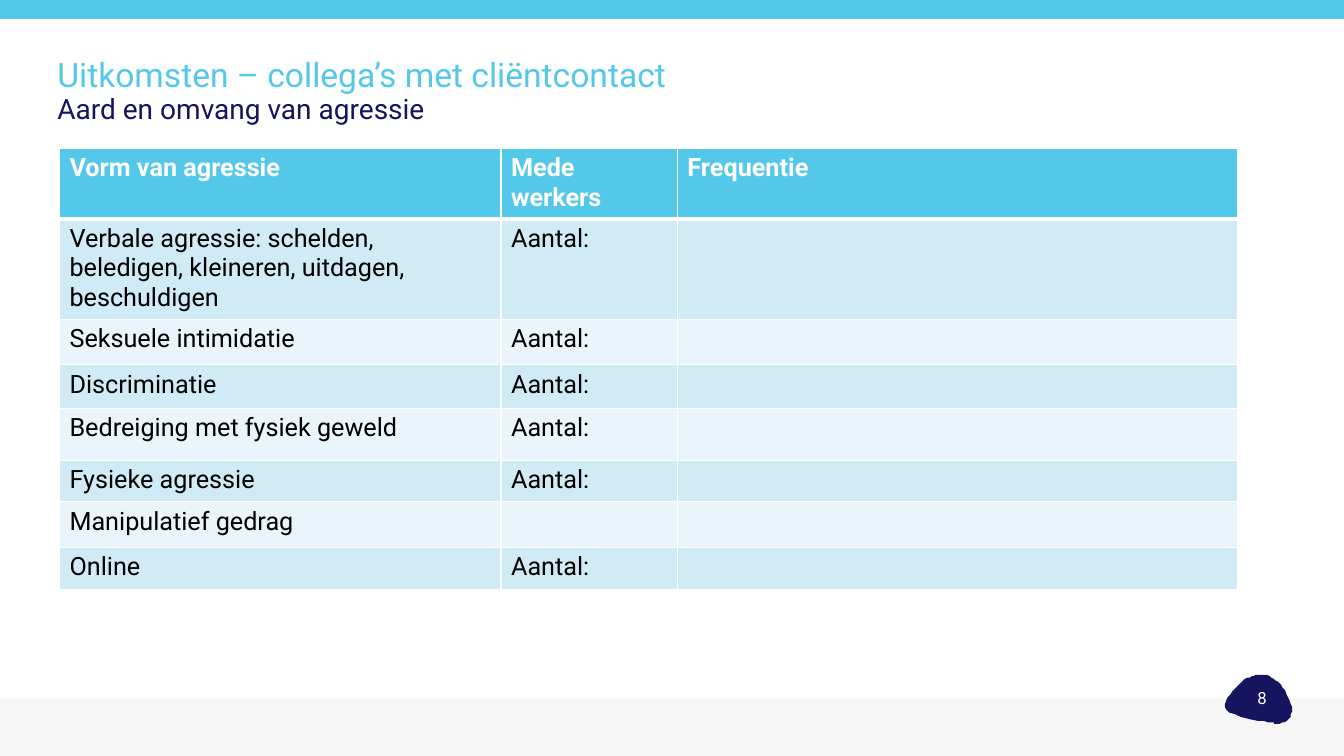
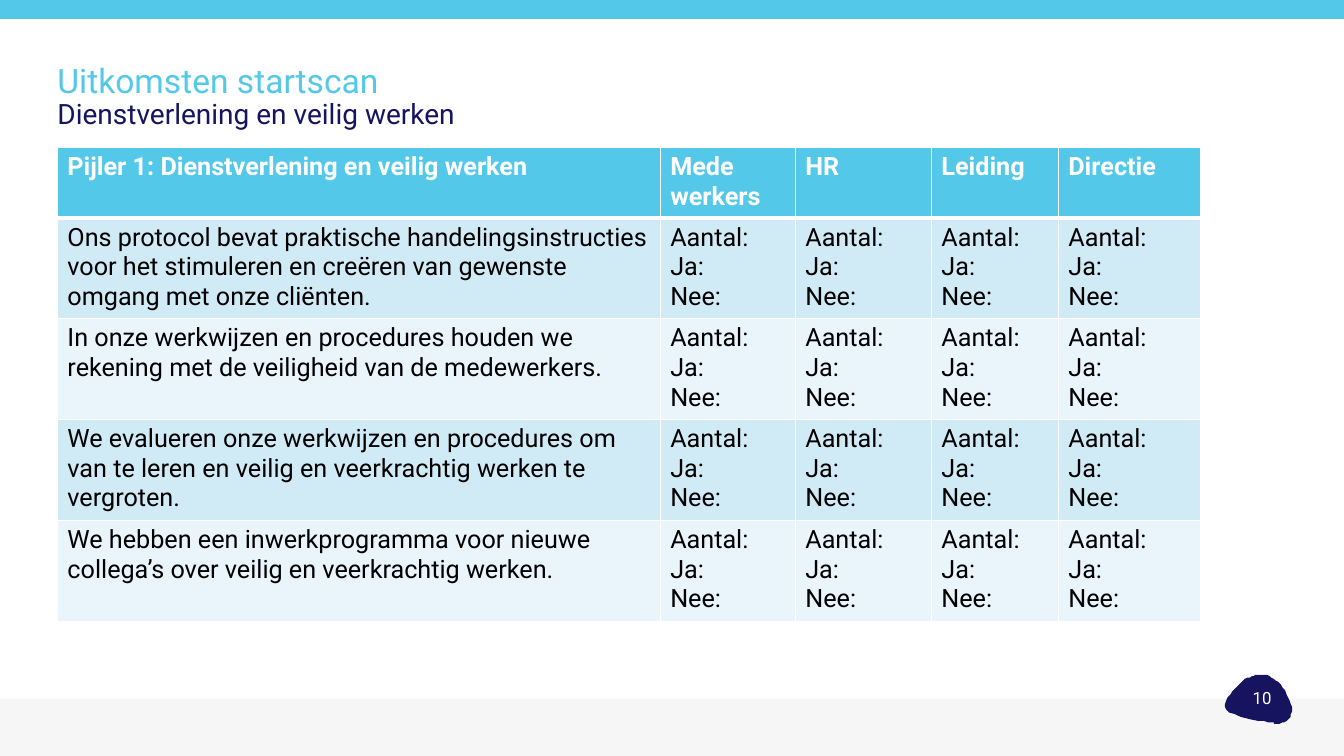
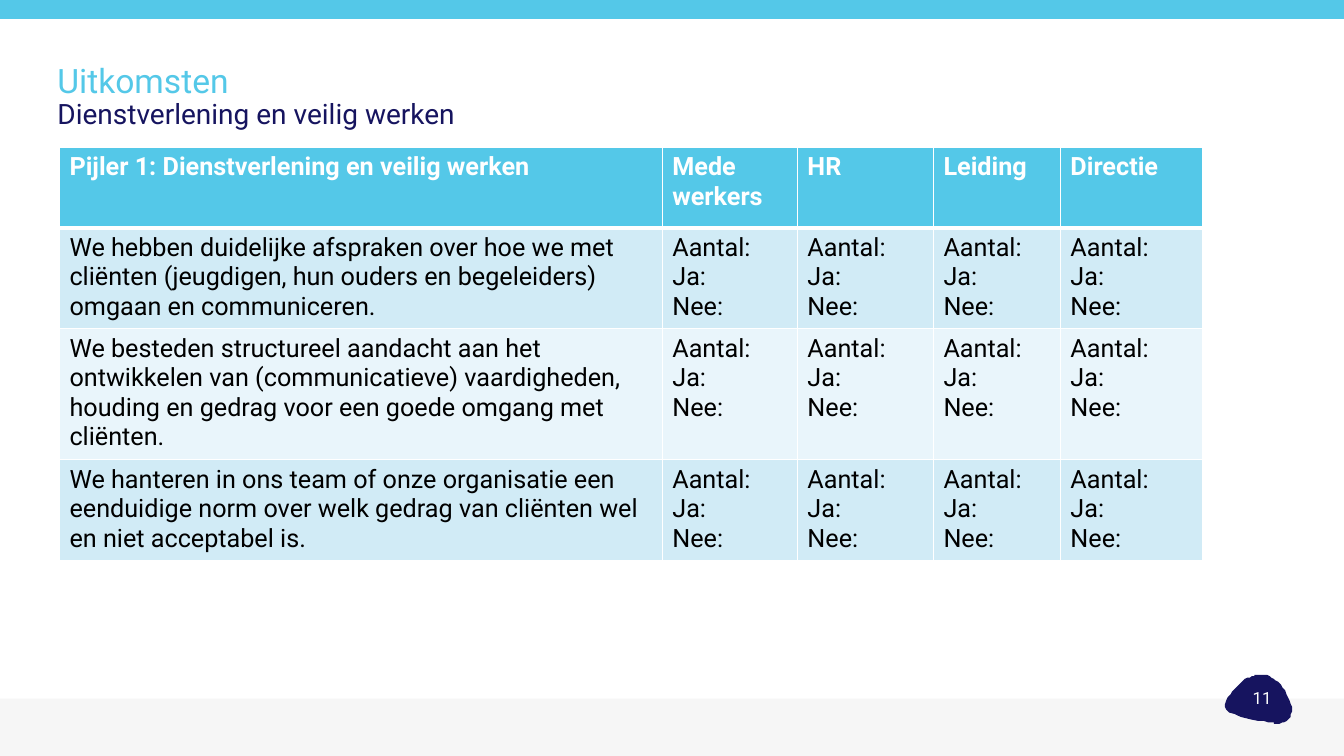
from lxml.etree import SubElement as Sub
from pptx import Presentation
from pptx.dml.color import RGBColor as RGB
from pptx.enum.shapes import MSO_SHAPE as Geo
from pptx.enum.text import MSO_ANCHOR as Anchor, PP_ALIGN as Align
from pptx.oxml.ns import qn
from pptx.util import Pt

SKY = RGB(0x54, 0xC8, 0xE8)
NAVY = RGB(0x16, 0x14, 0x5F)
WHITE = RGB(0xFF, 0xFF, 0xFF)
BLACK = RGB(0, 0, 0)
GREY = RGB(0xF4, 0xF4, 0xF4)
BANDS = (RGB(0xD1, 0xEB, 0xF6), RGB(0xE9, 0xF5, 0xFB))
FONT = "Roboto"
WIDE, HIGH = 960, 540

COUNT = "Aantal:"
VOTES = [COUNT + "\nJa:\nNee:"] * 4
STAFF = "Mede\nwerkers"
THEME = "Dienstverlening en veilig werken"
HEAD = ["Pijler 1: " + THEME, STAFF, "HR", "Leiding", "Directie"]
COLS = [430.6, 96.5, 97.2, 90.7, 101.5]

SLIDES = [
    dict(
        page="8", title="Uitkomsten – collega’s met cliëntcontact",
        sub="Aard en omvang van agressie", top=36.7, at=(42.5, 105.8),
        cols=[315.4, 126, 400.3],
        rows=[48.2, 68.4, 32.4, 31, 37.4, 29.5, 32.4, 30.2],
        cells=[
            ["Vorm van agressie", STAFF, "Frequentie"],
            ["Verbale agressie: schelden, beledigen, kleineren, uitdagen, "
             "beschuldigen", COUNT, ""],
            ["Seksuele intimidatie", COUNT, ""],
            ["Discriminatie", COUNT, ""],
            ["Bedreiging met fysiek geweld", COUNT, ""],
            ["Fysieke agressie", COUNT, ""],
            ["Manipulatief gedrag", "", ""],
            ["Online", COUNT, ""],
        ]),
    dict(
        page="10", title="Uitkomsten startscan", sub=THEME,
        top=40.3, at=(41, 105.1), cols=COLS,
        rows=[48.2, 68.4, 70.6, 68.4, 68.4],
        cells=[
            HEAD,
            ["Ons protocol bevat praktische handelingsinstructies voor het "
             "stimuleren en creëren van gewenste omgang met onze cliënten.",
             *VOTES],
            ["In onze werkwijzen en procedures houden we rekening met de "
             "veiligheid van de medewerkers.", *VOTES],
            ["We evalueren onze werkwijzen en procedures om van te leren en "
             "veilig en veerkrachtig werken te vergroten.", *VOTES],
            ["We hebben een inwerkprogramma voor nieuwe collega’s over "
             "veilig en veerkrachtig werken.", *VOTES],
        ]),
    dict(
        page="11", title="Uitkomsten", sub=THEME,
        top=40.3, at=(42.5, 105.1), cols=COLS, rows=[57.6] * 4,
        cells=[
            HEAD,
            ["We hebben duidelijke afspraken over hoe we met cliënten "
             "(jeugdigen, hun ouders en begeleiders) omgaan en "
             "communiceren.", *VOTES],
            ["We besteden structureel aandacht aan het ontwikkelen van "
             "(communicatieve) vaardigheden, houding en gedrag voor een "
             "goede omgang met cliënten.", *VOTES],
            ["We hanteren in ons team of onze organisatie een eenduidige "
             "norm over welk gedrag van cliënten wel en niet acceptabel is.",
             *VOTES],
        ]),
]

START = (900.7, 481.7)
CURVES = [
    ((898.6, 481.7), (896.4, 482.4), (894.2, 483.1)),
    ((888.5, 484.6), (878.4, 493.2), (874.8, 502.6)),
    ((871.2, 512.6), (907.2, 515.5), (910.1, 516.2)),
    ((910.8, 517), (911.5, 517), (912.2, 517)),
    ((918.7, 517), (928.1, 510.5), (919.4, 496.1)),
    ((913, 484.6), (906.5, 481.7), START),
]
STEPS = 12


def trace():
    dots, a = [], START
    for b, c, d in CURVES:
        for n in range(1, STEPS + 1):
            t = n / STEPS
            u = 1 - t
            dots.append(tuple(
                u**3 * p + 3 * u * u * t * q + 3 * u * t * t * r + t**3 * s
                for p, q, r, s in zip(a, b, c, d)))
        a = d
    return dots


def paint(shape, color):
    shape.shadow.inherit = False
    shape.fill.solid()
    shape.fill.fore_color.rgb = color
    shape.line.fill.background()


def write(para, text, size, color, bold=False):
    run = para.add_run()
    run.text = text
    font = run.font
    font.name, font.size, font.bold = FONT, Pt(size), bold
    font.color.rgb = color


def place(shape, *box):
    shape.left, shape.top, shape.width, shape.height = map(Pt, box)


def frame(shape):
    text = shape.text_frame
    text.word_wrap = True
    text.vertical_anchor = Anchor.MIDDLE
    text.margin_left = text.margin_right = 0
    text.margin_top = text.margin_bottom = 0
    return text.paragraphs[0]


def band(slide, top, high, color):
    bar = slide.shapes.add_shape(Geo.RECTANGLE, 0, Pt(top), Pt(WIDE), Pt(high))
    paint(bar, color)
    return bar


def decor(slide, page):
    foot = band(slide, 499, HIGH - 499, GREY)
    tint = foot.fill._xPr.find(qn("a:solidFill"))[0]
    Sub(tint, qn("a:alpha"), val="80000")
    pen = slide.shapes.build_freeform(*START, scale=Pt(1))
    pen.add_line_segments(trace(), close=True)
    paint(pen.convert_to_shape(), NAVY)
    band(slide, 0, 13.6, SKY)
    box = slide.shapes.add_textbox(Pt(884.2), Pt(483.8), Pt(34.6), Pt(29.5))
    para = frame(box)
    para.alignment = Align.CENTER
    write(para, page, 12, WHITE)


def head(slide, title, sub, top):
    shape = slide.shapes.title
    place(shape, 41, top, 876, 58.3)
    para = frame(shape)
    para.alignment = Align.LEFT
    para.line_spacing = 0.9
    write(para, title, 24, SKY)
    para.add_line_break()
    Sub(para._p.find(qn("a:br")), qn("a:rPr"), sz="2400")
    write(para, sub, 20, NAVY)


def edge(cell, row):
    prop = cell._tc.get_or_add_tcPr()
    widths = dict(L=1, R=1, T=3 if row == 1 else 1, B=3 if row == 0 else 1)
    for side, width in widths.items():
        line = Sub(prop, qn("a:ln" + side), w=str(Pt(width)))
        Sub(Sub(line, qn("a:solidFill")), qn("a:srgbClr"), val=str(WHITE))


def grid(slide, at, cols, rows, cells):
    table = slide.shapes.add_table(
        len(rows), len(cols), *map(Pt, (*at, sum(cols), sum(rows)))).table
    table.horz_banding = False
    for col, width in zip(table.columns, cols):
        col.width = Pt(width)
    for row, high in zip(table.rows, rows):
        row.height = Pt(high)
    for i, texts in enumerate(cells):
        top = i == 0
        for j, text in enumerate(texts):
            cell = table.cell(i, j)
            edge(cell, i)
            cell.fill.solid()
            cell.fill.fore_color.rgb = SKY if top else BANDS[(i - 1) % 2]
            body = cell.text_frame
            for n, part in enumerate(text.split("\n") if text else []):
                para = body.add_paragraph() if n else body.paragraphs[0]
                write(para, part, 18, WHITE if top else BLACK, top)


def main():
    deck = Presentation()
    deck.slide_width, deck.slide_height = Pt(WIDE), Pt(HIGH)
    for item in SLIDES:
        slide = deck.slides.add_slide(deck.slide_layouts[5])
        decor(slide, item["page"])
        head(slide, item["title"], item["sub"], item["top"])
        grid(slide, item["at"], item["cols"], item["rows"], item["cells"])
    deck.save("out.pptx")


if __name__ == "__main__":
    main()
